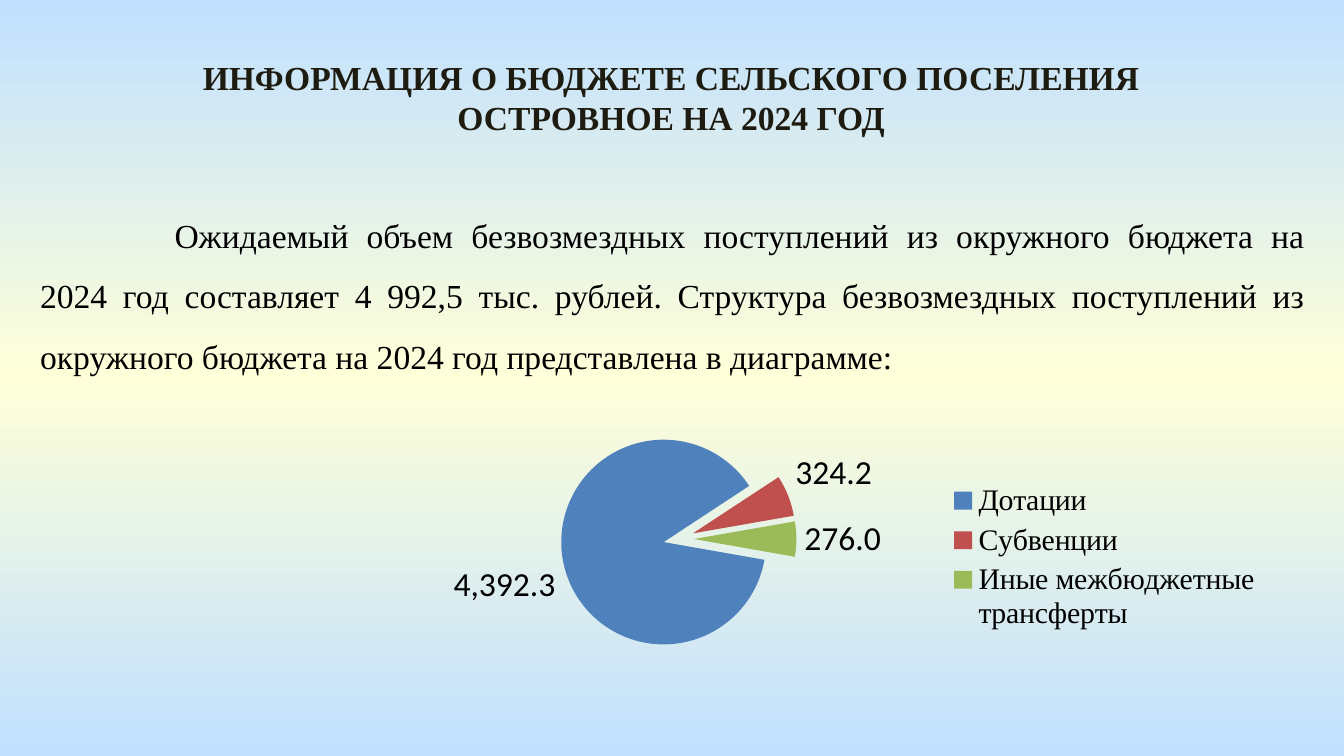
from copy import deepcopy

from lxml.etree import SubElement
from pptx import Presentation
from pptx.chart.data import CategoryChartData
from pptx.dml.color import RGBColor
from pptx.enum.chart import XL_CHART_TYPE, XL_LABEL_POSITION, XL_LEGEND_POSITION
from pptx.enum.text import MSO_ANCHOR, MSO_AUTO_SIZE, PP_ALIGN
from pptx.oxml.ns import qn
from pptx.util import Inches, Pt

WIDTH = Inches(10)
HEIGHT = WIDTH * 9 // 16
SKY = RGBColor(0xC1, 0xE0, 0xFF)
CREAM = RGBColor(0xFF, 0xFF, 0xD9)
DARK = RGBColor(0x1E, 0x1C, 0x11)
BLACK = RGBColor(0, 0, 0)
BLUE = RGBColor(0x4F, 0x81, 0xBD)
RED = RGBColor(0xC0, 0x50, 0x4D)
GREEN = RGBColor(0x9B, 0xBB, 0x59)
SERIF, SANS = "Times New Roman", "Calibri"

TITLE = "ИНФОРМАЦИЯ О БЮДЖЕТЕ СЕЛЬСКОГО ПОСЕЛЕНИЯ ОСТРОВНОЕ НА 2024 ГОД"
BODY = (
    "\tОжидаемый объем безвозмездных поступлений из окружного бюджета на 2024 год "
    "составляет 4 992,5 тыс. рублей. Структура безвозмездных поступлений из "
    "окружного бюджета на 2024 год представлена в диаграмме:"
)
TRANSFERS = [
    ("Дотации", 4392.3, BLUE),
    ("Субвенции", 324.2, RED),
    ("Иные межбюджетные трансферты", 276.0, GREEN),
]


def set_font(font, name, size, color=BLACK, bold=False):
    """Apply typeface, size, colour and weight to a font."""
    font.name, font.size, font.bold = name, Pt(size), bold
    font.color.rgb = color


def paint_background(slide):
    """Fill the slide with a vertical sky-cream-sky gradient."""
    fill = slide.background.fill
    fill.gradient()
    fill.gradient_angle = 90
    stops = slide.element.find(".//" + qn("a:gsLst"))
    stops.append(deepcopy(stops[0]))
    for stop, position, color in zip(fill.gradient_stops, (0, 0.5, 1), (SKY, CREAM, SKY)):
        stop.position = position
        stop.color.rgb = color


def write_text(shape, text, alignment, color, bold=False, line_spacing=1.0):
    """Put one wrapped serif paragraph into a shape and return it."""
    frame = shape.text_frame
    frame.word_wrap = True
    frame.auto_size = MSO_AUTO_SIZE.NONE
    frame.vertical_anchor = MSO_ANCHOR.TOP
    paragraph = frame.paragraphs[0]
    paragraph.add_run().text = text
    paragraph.alignment = alignment
    paragraph.line_spacing = line_spacing
    set_font(paragraph.font, SERIF, 18, color, bold)
    return paragraph


def set_tab_stop(paragraph, position):
    """Give a paragraph one left tab stop."""
    properties = paragraph.font._element.getparent()
    tabs = SubElement(properties, qn("a:tabLst"))
    tab = SubElement(tabs, qn("a:tab"))
    tab.set("pos", str(position))
    tab.set("algn", "l")
    properties.find(qn("a:defRPr")).addprevious(tabs)


def add_title(slide):
    """Move and format the title placeholder."""
    title = slide.shapes.title
    title.left, title.top = Inches(1.13), Inches(0.37)
    title.width, title.height = Inches(7.73), Inches(0.71)
    write_text(title, TITLE, PP_ALIGN.CENTER, DARK, bold=True)


def add_body(slide):
    """Add the justified introduction."""
    box = slide.shapes.add_textbox(Inches(0.2), Inches(1.4), Inches(9.61), Inches(1.46))
    paragraph = write_text(box, BODY, PP_ALIGN.JUSTIFY, BLACK, line_spacing=1.5)
    set_tab_stop(paragraph, Inches(1))


def place_plot(chart, **shares):
    """Fix the inner plot area as shares of the chart's size."""
    plot_area = chart.element.find(".//" + qn("c:plotArea"))
    for old_layout in plot_area.findall(qn("c:layout")):
        plot_area.remove(old_layout)
    layout = SubElement(plot_area, qn("c:layout"))
    plot_area.insert(0, layout)
    manual = SubElement(layout, qn("c:manualLayout"))
    settings = {"layoutTarget": "inner", "xMode": "edge", "yMode": "edge", **shares}
    for name, value in settings.items():
        SubElement(manual, qn(f"c:{name}")).set("val", str(value))


def turn_and_explode(chart, angle, explosion):
    """Rotate the first slice and pull all slices apart."""
    pie = chart.element.find(".//" + qn("c:pieChart"))
    for old_angle in pie.findall(qn("c:firstSliceAng")):
        pie.remove(old_angle)
    SubElement(pie, qn("c:firstSliceAng")).set("val", str(angle))
    series = pie.find(qn("c:ser"))
    gap = SubElement(series, qn("c:explosion"))
    gap.set("val", str(explosion))
    series.find(qn("c:tx")).addnext(gap)


def add_pie(slide):
    """Add the pie chart of transfers with labels and legend."""
    data = CategoryChartData(number_format="#,##0.0")
    data.categories = [name for name, _, _ in TRANSFERS]
    data.add_series("Series 1", [value for _, value, _ in TRANSFERS])
    chart = slide.shapes.add_chart(
        XL_CHART_TYPE.PIE, Inches(0.43), Inches(2.66), Inches(9.06), Inches(2.97), data
    ).chart
    set_font(chart.font, SANS, 18)
    chart.has_title = False
    chart.has_legend = True
    chart.legend.position = XL_LEGEND_POSITION.RIGHT
    chart.legend.include_in_layout = False
    set_font(chart.legend.font, SERIF, 16)
    place_plot(chart, x=0.39, y=0.16, w=0.24, h=0.59)
    turn_and_explode(chart, 100, 15)

    plot = chart.plots[0]
    plot.vary_by_categories = True
    for index, (_, _, color) in enumerate(TRANSFERS):
        fill = plot.series[0].points[index].format.fill
        fill.solid()
        fill.fore_color.rgb = color
    labels = plot.series[0].data_labels
    labels.show_value = True
    labels.position = XL_LABEL_POSITION.OUTSIDE_END
    labels.number_format = "#,##0.0"
    labels.number_format_is_linked = False
    set_font(labels.font, SANS, 18)


def main():
    """Build and save the budget slide."""
    presentation = Presentation()
    presentation.slide_width, presentation.slide_height = WIDTH, HEIGHT
    slide = presentation.slides.add_slide(presentation.slide_layouts[5])
    paint_background(slide)
    add_title(slide)
    add_body(slide)
    add_pie(slide)
    presentation.save("out.pptx")


if __name__ == "__main__":
    main()
